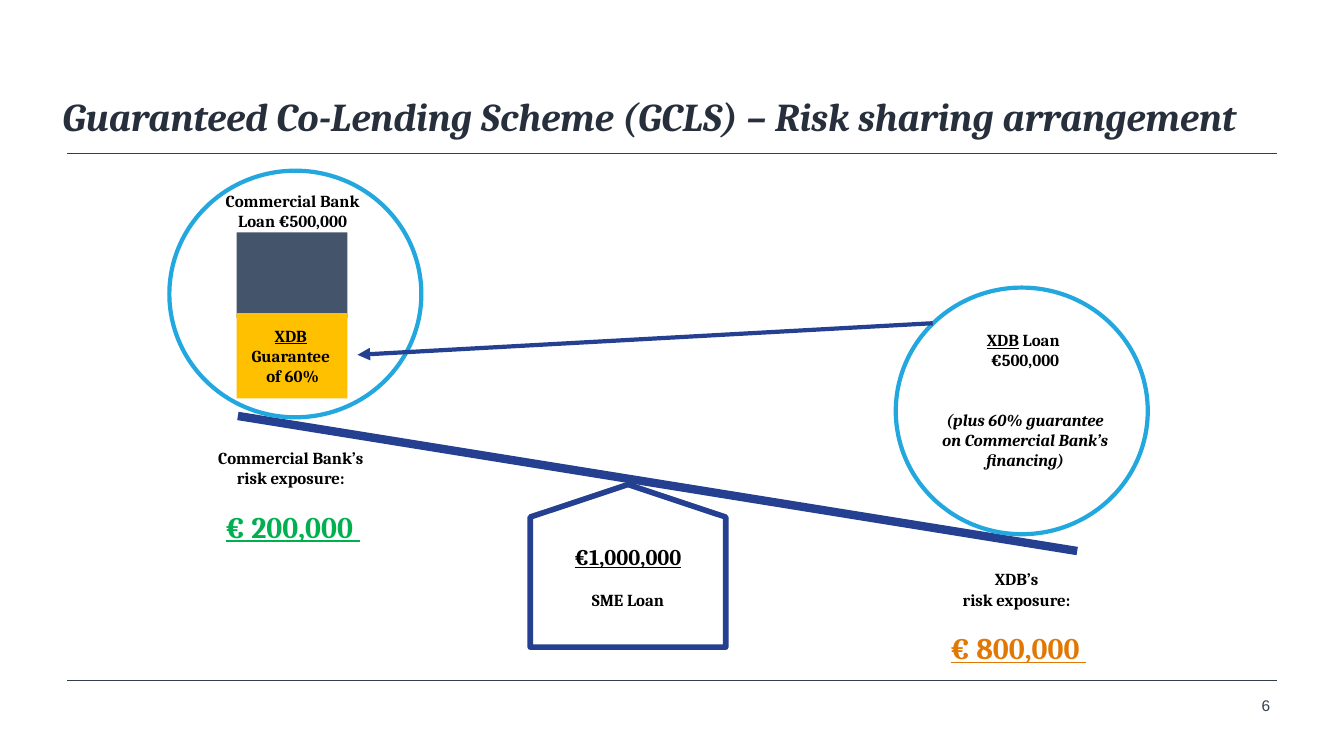
from pptx import Presentation
from pptx.dml.color import RGBColor
from pptx.enum.shapes import MSO_CONNECTOR, MSO_SHAPE
from pptx.enum.text import MSO_ANCHOR, PP_ALIGN
from pptx.oxml.ns import qn
from pptx.util import Inches, Pt
from lxml import etree

STRAIGHT = MSO_CONNECTOR.STRAIGHT
OVAL = MSO_SHAPE.OVAL
RECT = MSO_SHAPE.RECTANGLE
PIVOT = MSO_SHAPE.FLOWCHART_OFFPAGE_CONNECTOR
TOP, MIDDLE = MSO_ANCHOR.TOP, MSO_ANCHOR.MIDDLE
LEFT, CENTER, RIGHT = PP_ALIGN.LEFT, PP_ALIGN.CENTER, PP_ALIGN.RIGHT

BLACK = RGBColor(0x00, 0x00, 0x00)
INK = RGBColor(0x26, 0x2F, 0x3B)
SLATE = RGBColor(0x33, 0x3F, 0x50)
STEEL = RGBColor(0x44, 0x54, 0x6A)
NAVY = RGBColor(0x25, 0x40, 0x90)
SKY = RGBColor(0x22, 0xA7, 0xDF)
GOLD = RGBColor(0xFF, 0xC0, 0x00)
GREEN = RGBColor(0x00, 0xB0, 0x50)
ORANGE = RGBColor(0xE2, 0x78, 0x04)

GAP = 21.8


def add_line(slide, start, end, color, width, arrow=False):
    line = slide.shapes.add_connector(
        STRAIGHT, *[Inches(v) for v in (*start, *end)])
    line.line.color.rgb = color
    line.line.width = Pt(width)
    props = line._element.spPr
    etree.SubElement(props, qn("a:effectLst"))
    if arrow:
        tip = etree.SubElement(props.find(qn("a:ln")), qn("a:tailEnd"))
        tip.set("type", "triangle")


def add_form(slide, kind, box, fill=None, line=None, width=0):
    form = slide.shapes.add_shape(kind, *[Inches(v) for v in box])
    form.shadow.inherit = False
    if fill is None:
        form.fill.background()
    else:
        form.fill.solid()
        form.fill.fore_color.rgb = fill
    if line is None:
        form.line.fill.background()
    else:
        form.line.color.rgb = line
        form.line.width = Pt(width)
    return form


def add_frame(slide, box, anchor=TOP):
    frame = slide.shapes.add_textbox(*[Inches(v) for v in box]).text_frame
    frame.word_wrap = True
    frame.vertical_anchor = anchor
    return frame


def style(para, size=18, color=BLACK, face="Cambria", bold=True,
          italic=False, under=False, align=CENTER, gap=0):
    para.alignment = align
    if gap:
        para.space_before = Pt(gap)
    font = para.font
    font.name, font.size, font.bold = face, Pt(size), bold
    font.italic, font.underline = italic, under
    font.color.rgb = color


def add_text(slide, box, text, anchor=TOP, **look):
    para = add_frame(slide, box, anchor).paragraphs[0]
    para.text = text
    style(para, **look)


def add_label(slide, box, name, rest, *lines):
    frame = add_frame(slide, box)
    first = frame.paragraphs[0]
    head = first.add_run()
    head.text = name
    head.font.underline = True
    first.add_run().text = rest
    style(first)
    for text in lines:
        para = frame.add_paragraph()
        para.text = text
        style(para)


def add_risk(slide, left, top, owner, amount, color):
    frame = add_frame(slide, (left, top, 4.21, 1.55))
    frame.text = f"{owner} \nrisk exposure: \n{amount} "
    *heads, total = frame.paragraphs
    for para in heads:
        style(para)
    style(total, size=32, color=color, under=True, gap=GAP)


def add_pivot(slide):
    pivot = add_form(slide, PIVOT, (7.89, 7.21, 2.91, 2.42),
                     line=NAVY, width=6)
    pivot.rotation = 180
    frame = add_frame(slide, (7.97, 8.03, 2.75, 1.11))
    frame.text = "€1,000,000\nSME Loan"
    total, loan = frame.paragraphs
    style(total, size=24, under=True)
    style(loan, gap=GAP)


def main():
    deck = Presentation()
    deck.slide_width, deck.slide_height = Inches(20), Inches(11.25)
    slide = deck.slides.add_slide(deck.slide_layouts[6])

    for y in (10.12, 2.28):
        add_line(slide, (1, y), (19, y), SLATE, 1)
    add_text(slide, (0.83, 1.2, 18.62, 1.05),
             "Guaranteed Co-Lending Scheme (GCLS) – Risk sharing arrangement",
             MIDDLE, size=42.3, color=INK, italic=True, align=LEFT)
    add_text(slide, (17.49, 10.32, 1.51, 0.36), "6", MIDDLE, size=16.5,
             color=SLATE, face="Arial", bold=False, align=RIGHT)

    add_line(slide, (3.54, 6.19), (16.03, 8.2), NAVY, 9)
    for left, top in ((2.52, 2.54), (13.33, 4.28)):
        add_form(slide, OVAL, (left, top, 3.75, 3.67), line=SKY, width=4.5)
    add_line(slide, (13.88, 4.81), (5.32, 5.28), NAVY, 4.5, arrow=True)
    for top, fill in ((3.46, STEEL), (4.66, GOLD)):
        add_form(slide, RECT, (3.52, top, 1.65, 1.27), fill)

    add_text(slide, (2.98, 2.79, 2.75, 0.71),
             "Commercial Bank Loan €500,000")
    add_label(slide, (2.98, 4.79, 2.75, 1.01),
              "XDB", " ", "Guarantee ", "of 60%")
    add_label(slide, (13.88, 4.86, 2.75, 0.71),
              "XDB", " Loan ", "€500,000")
    add_text(slide, (13.88, 6.04, 2.75, 1.01),
             "(plus 60% guarantee on Commercial Bank’s financing)",
             italic=True)

    add_risk(slide, 13.05, 8.42, "XDB’s", "€ 800,000", ORANGE)
    add_risk(slide, 2.25, 6.61, "Commercial Bank’s", "€ 200,000", GREEN)
    add_pivot(slide)
    deck.save("out.pptx")


if __name__ == "__main__":
    main()
